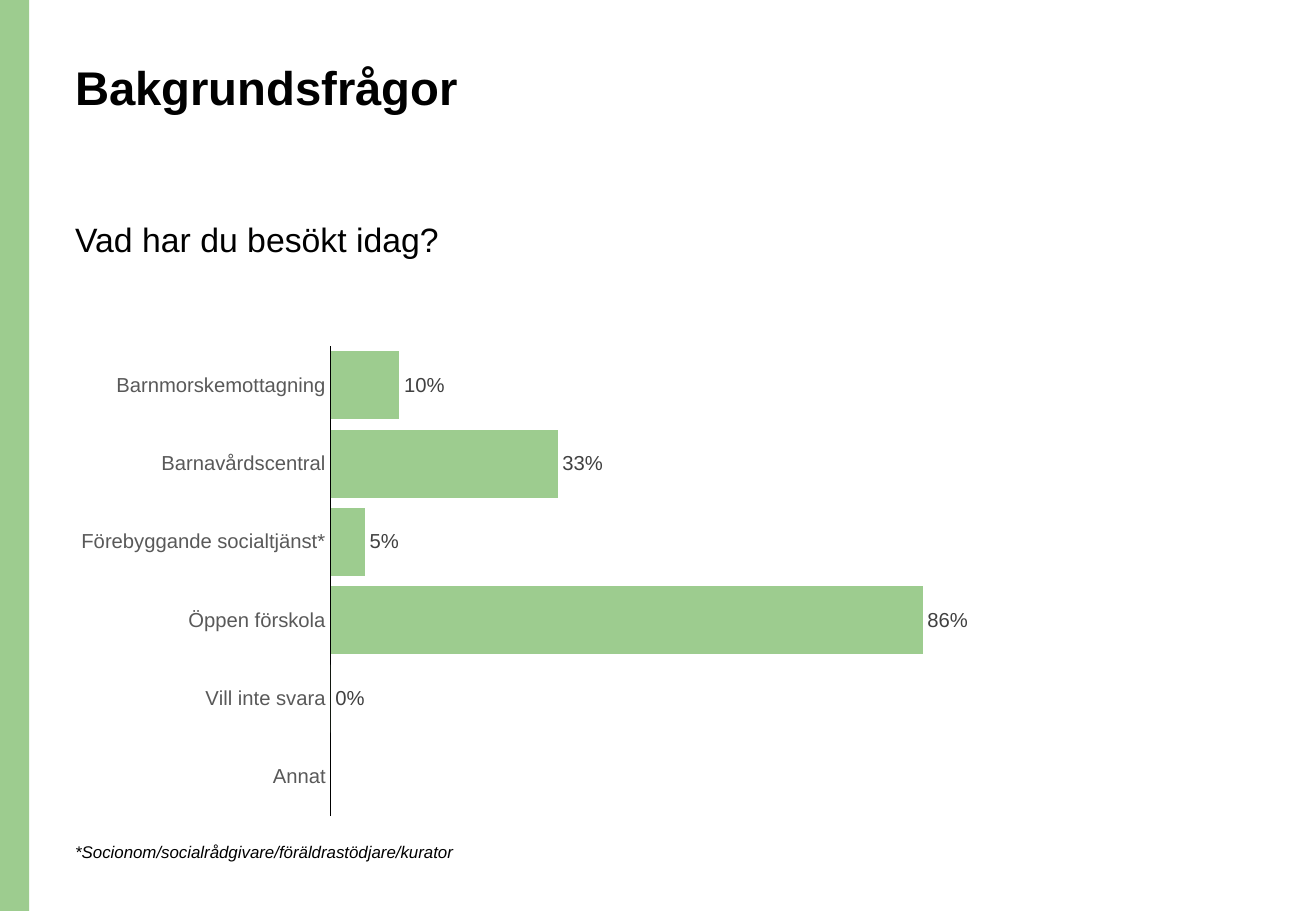
import pptx
import pptx.chart.data
import pptx.dml.color
import pptx.enum.chart
import pptx.enum.shapes
import pptx.enum.text
import pptx.util
from dataclasses import dataclass
from lxml import etree
from pptx.util import Inches


@dataclass(frozen=True)
class Theme:
    font: str = "Arial"
    green: str = "9DCC8F"
    black: str = "000000"
    axis_text: str = "595959"
    label_text: str = "404040"
    title: int = 28
    question: int = 20
    chart: int = 12
    note: int = 10


THEME = Theme()
LEFT = 0.52
TEXTS = [
    ("Bakgrundsfrågor", (LEFT, 0.48, 9.34, 1.02), THEME.title, True, False, 0.9),
    ("Vad har du besökt idag?", (LEFT, 1.79, 6.5, 0.74), THEME.question, False, False, 0.9),
    ("*Socionom/socialrådgivare/föräldrastödjare/kurator", (LEFT, 6.88, 5.42, 0.27),
     THEME.note, False, True, 1.0),
]
VISITS = {
    "Barnmorskemottagning": 0.10,
    "Barnavårdscentral": 0.33,
    "Förebyggande socialtjänst*": 0.05,
    "Öppen förskola": 0.86,
    "Vill inte svara": 0,
    "Annat": None,
}
CHART_AREA = (LEFT, 2.77, 7.46, 4.03)
PLOT_AREA = (2.72, 2.85, 5.1, 3.87)


def color(value):
    return pptx.dml.color.RGBColor.from_string(value)


def style_font(font, size, value):
    font.name = THEME.font
    font.size = pptx.util.Pt(size)
    font.color.rgb = color(value)


def add_side_band(slide, height):
    band = slide.shapes.add_shape(
        pptx.enum.shapes.MSO_SHAPE.RECTANGLE, 0, 0, Inches(0.24), height)
    band.shadow.inherit = False
    band.fill.solid()
    band.fill.fore_color.rgb = color(THEME.green)
    band.line.fill.background()


def add_text(slide, text, area, size, bold, italic, spacing):
    box = slide.shapes.add_textbox(*map(Inches, area))
    frame = box.text_frame
    frame.word_wrap = True
    frame.vertical_anchor = pptx.enum.text.MSO_ANCHOR.TOP
    frame.text = text
    para = frame.paragraphs[0]
    para.line_spacing = spacing
    font = para.runs[0].font
    style_font(font, size, THEME.black)
    font.bold = bold
    font.italic = italic


def place_plot(chart):
    left, top, width, height = CHART_AREA
    plot_left, plot_top, plot_width, plot_height = PLOT_AREA
    settings = [
        ("layoutTarget", "inner"), ("xMode", "edge"), ("yMode", "edge"),
        ("x", (plot_left - left) / width), ("y", (plot_top - top) / height),
        ("w", plot_width / width), ("h", plot_height / height),
    ]
    plot_area = chart.plots[0]._element.getparent()
    namespace = "{%s}" % etree.QName(plot_area).namespace
    for old in plot_area.findall(namespace + "layout"):
        plot_area.remove(old)
    layout = etree.Element(namespace + "layout")
    manual = etree.SubElement(layout, namespace + "manualLayout")
    for name, value in settings:
        etree.SubElement(manual, namespace + name).set("val", str(value))
    plot_area.insert(0, layout)


def add_visit_chart(slide):
    data = pptx.chart.data.CategoryChartData(number_format="0%")
    data.categories = list(VISITS)
    data.add_series("Series 1", list(VISITS.values()))
    chart = slide.shapes.add_chart(
        pptx.enum.chart.XL_CHART_TYPE.BAR_CLUSTERED, *map(Inches, CHART_AREA), data).chart
    style_font(chart.font, THEME.note, THEME.black)
    chart.has_legend = False
    chart.has_title = False
    place_plot(chart)

    categories = chart.category_axis
    categories.reverse_order = True
    categories.has_major_gridlines = False
    categories.major_tick_mark = pptx.enum.chart.XL_TICK_MARK.NONE
    categories.format.line.color.rgb = color(THEME.black)
    categories.format.line.width = pptx.util.Pt(0.75)
    style_font(categories.tick_labels.font, THEME.chart, THEME.axis_text)

    values = chart.value_axis
    values.minimum_scale = 0
    values.maximum_scale = 0.9
    values.has_major_gridlines = False
    values.visible = False

    plot = chart.plots[0]
    plot.gap_width = 15
    plot.vary_by_categories = False
    series = plot.series[0]
    series.format.fill.solid()
    series.format.fill.fore_color.rgb = color(THEME.green)

    labels = series.data_labels
    labels.show_value = True
    labels.number_format = "0%"
    labels.number_format_is_linked = False
    labels.position = pptx.enum.chart.XL_LABEL_POSITION.OUTSIDE_END
    style_font(labels.font, THEME.chart, THEME.label_text)


def main():
    deck = pptx.Presentation()
    deck.slide_width = Inches(10.83)
    deck.slide_height = Inches(7.5)
    slide = deck.slides.add_slide(deck.slide_layouts[6])
    add_side_band(slide, deck.slide_height)
    for entry in TEXTS:
        add_text(slide, *entry)
    add_visit_chart(slide)
    deck.save("out.pptx")


if __name__ == "__main__":
    main()
